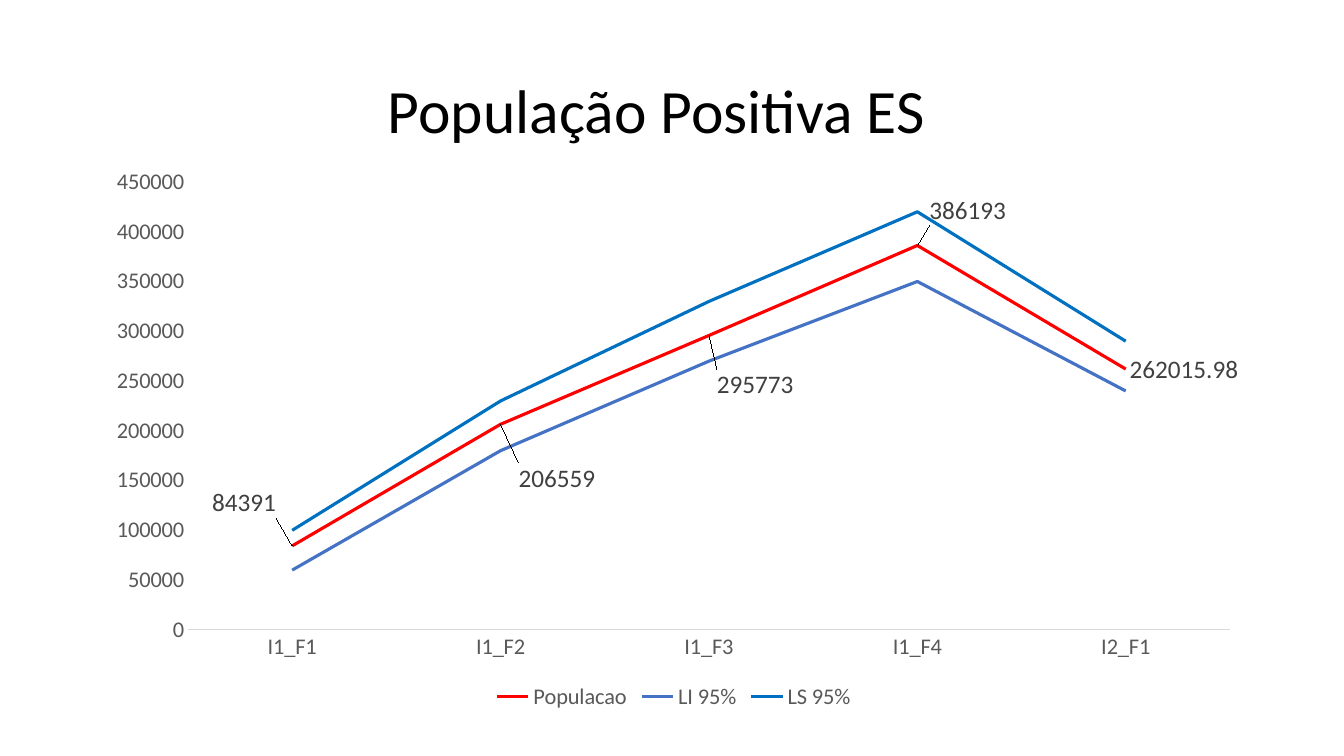
from lxml import etree
from pptx import Presentation
from pptx.chart.data import CategoryChartData
from pptx.dml.color import RGBColor
from pptx.enum.chart import XL_CHART_TYPE, XL_LABEL_POSITION, XL_LEGEND_POSITION, XL_TICK_MARK
from pptx.enum.text import MSO_ANCHOR, PP_ALIGN
from pptx.oxml.ns import qn
from pptx.util import Pt

LINE = XL_CHART_TYPE.LINE
RIGHT = XL_LABEL_POSITION.RIGHT
BOTTOM = XL_LEGEND_POSITION.BOTTOM
NO_TICK = XL_TICK_MARK.NONE
MIDDLE = MSO_ANCHOR.MIDDLE
CENTER = PP_ALIGN.CENTER
EMU_PER_PX = 914400 / 100.8
C15 = "http://schemas.microsoft.com/office/drawing/2012/chart"


def px(*lengths):
    return [round(length * EMU_PER_PX) for length in lengths]


def style_font(font, size, color):
    font.name = "Calibri"
    font.size = Pt(size)
    font.color.rgb = RGBColor.from_string(color)


presentation = Presentation()
presentation.slide_width, presentation.slide_height = px(1344, 756)
slide = presentation.slides.add_slide(presentation.slide_layouts[5])

# Title
title = slide.shapes.title
title.left, title.top, title.width, title.height = px(60, 41, 1193, 146)
title.text_frame.text = "População Positiva ES"
title.text_frame.vertical_anchor = MIDDLE
paragraph = title.text_frame.paragraphs[0]
paragraph.alignment = CENTER
paragraph.line_spacing = 0.9
style_font(paragraph.runs[0].font, 44, "000000")

# Chart data
series_rows = [
    ("Populacao", (84391, 206559, 295773, 386193, 262015.98), "FF0000"),
    ("LI 95%", (60000, 180000, 270000, 350000, 240000), "4472C4"),
    ("LS 95%", (100000, 230000, 330000, 420000, 290000), "0070C0"),
]
chart_data = CategoryChartData()
chart_data.categories = ["I1_F1", "I1_F2", "I1_F3", "I1_F4", "I2_F1"]
for name, values, color in series_rows:
    chart_data.add_series(name, values)

CHART_WIDTH, CHART_HEIGHT = 1159, 558
chart = slide.shapes.add_chart(
    LINE, *px(94, 157, CHART_WIDTH, CHART_HEIGHT), chart_data
).chart
style_font(chart.font, 10, "000000")
chart.has_title = False
chart.has_legend = True
chart.legend.position = BOTTOM
chart.legend.include_in_layout = False
style_font(chart.legend.font, 16, "595959")

# Axes
category_axis, value_axis = chart.category_axis, chart.value_axis
for axis in (category_axis, value_axis):
    axis.major_tick_mark = NO_TICK
    axis.minor_tick_mark = NO_TICK
    axis.has_major_gridlines = False
    style_font(axis.tick_labels.font, 16, "595959")
category_axis.format.line.color.rgb = RGBColor.from_string("D9D9D9")
category_axis.format.line.width = Pt(0.75)
value_axis.format.line.fill.background()
value_axis.minimum_scale = 0
value_axis.maximum_scale = 450000
value_axis.major_unit = 50000

# Lines
plot = chart.plots[0]
plot.vary_by_categories = False
for series, (name, values, color) in zip(plot.series, series_rows):
    series.smooth = False
    series.format.line.color.rgb = RGBColor.from_string(color)
    series.format.line.width = Pt(2.25)

# Population labels, the first four shifted in px from their points
population = plot.series[0]
labels = population.data_labels
labels.show_value = True
labels.position = RIGHT
style_font(labels.font, 18, "404040")
label_shifts = [(-84, -43), (14, 54), (4, 49), (8, -35)]
for index in range(len(label_shifts)):
    label = population.points[index].data_label
    style_font(label.font, 18, "404040")
    label.position = RIGHT

# No leader lines between the points and the shifted labels
extension_list = etree.SubElement(labels._element, qn("c:extLst"))
extension = etree.SubElement(extension_list, qn("c:ext"), nsmap={"c15": C15})
extension.set("uri", "{CE6537A1-D6FC-4f65-9D91-7224C49458BB}")
etree.SubElement(extension, f"{{{C15}}}showLeaderLines").set("val", "0")

# Manual layouts of the labels and the plot area
layouts = []
for label_element, (right, down) in zip(labels._element.findall(qn("c:dLbl")), label_shifts):
    layout = etree.Element(qn("c:layout"))
    label_element.find(qn("c:idx")).addnext(layout)
    layouts.append((layout, {"x": right / CHART_WIDTH, "y": down / CHART_HEIGHT}))

plot_area = chart._chartSpace.chart.plotArea
for old_layout in plot_area.findall(qn("c:layout")):
    plot_area.remove(old_layout)
plot_layout = etree.Element(qn("c:layout"))
plot_area.insert(0, plot_layout)
layouts.append((plot_layout, {
    "layoutTarget": "inner", "xMode": "edge", "yMode": "edge",
    "x": 94 / CHART_WIDTH, "y": 25 / CHART_HEIGHT,
    "w": 1042 / CHART_WIDTH, "h": 448 / CHART_HEIGHT,
}))
for layout, settings in layouts:
    manual_layout = etree.SubElement(layout, qn("c:manualLayout"))
    for tag, value in settings.items():
        etree.SubElement(manual_layout, qn(f"c:{tag}")).set("val", str(value))

presentation.save("out.pptx")
